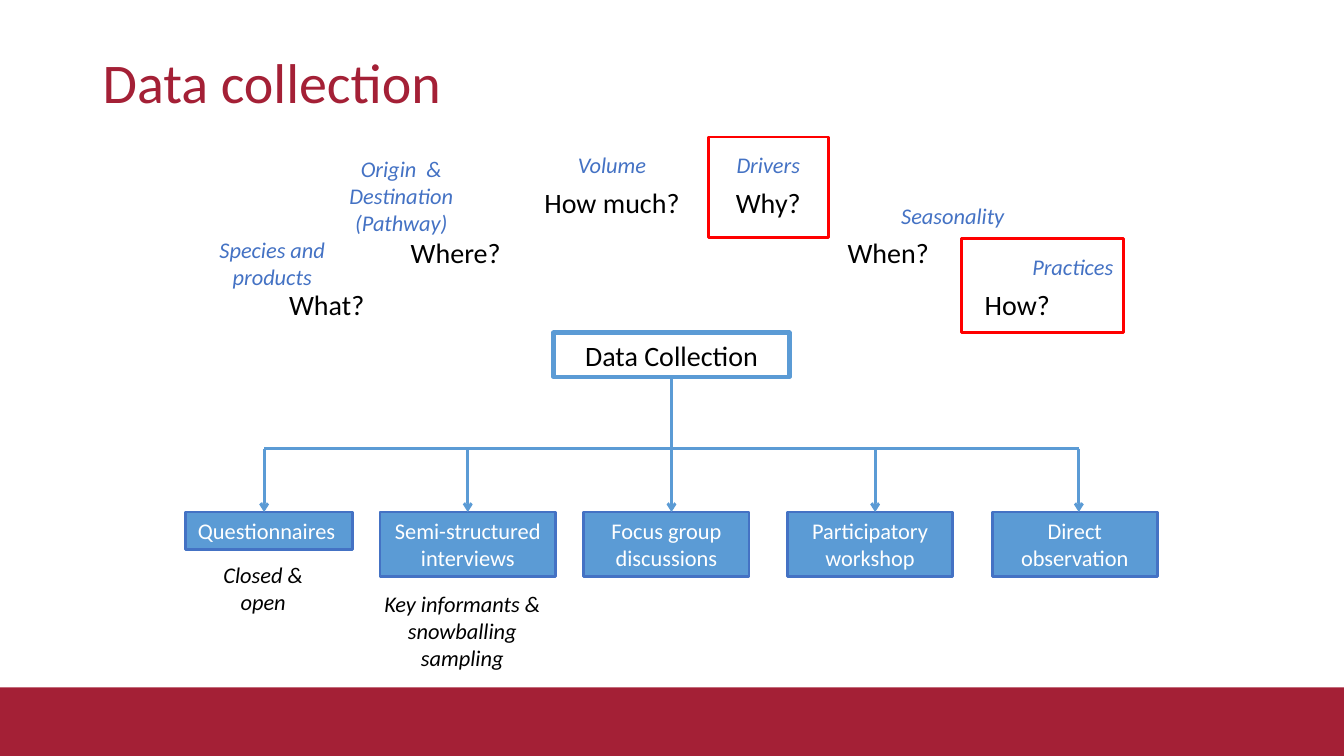
"""Builds the data collection slide: questions, methods and the tree between them."""
from lxml import etree
from pptx import Presentation, util as u
from pptx.dml.color import RGBColor
from pptx.enum import shapes, text
from pptx.oxml.ns import qn

PX = 9144
BLUE, INK, RED, WINE = "5B9BD5", "4472C4", "FF0000", "A42036"

deck = Presentation()
deck.slide_width, deck.slide_height = 1333 * PX, 750 * PX
slide = deck.slides.add_slide(deck.slide_layouts[6])


def hue(code):
    return RGBColor.from_string(code)


def put(words, x, y, w, h, size=16, color="000000", italic=False, box=False,
        fill=None, line=None, width=2, align="CENTER", anchor="TOP", lead=None):
    area = [n * PX for n in (x, y, w, h)]
    if box:
        item = slide.shapes.add_shape(shapes.MSO_SHAPE.RECTANGLE, *area)
        item.shadow.inherit = False
        if fill:
            item.fill.solid()
            item.fill.fore_color.rgb = hue(fill)
        else:
            item.fill.background()
        if line:
            item.line.color.rgb = hue(line)
            item.line.width = u.Pt(width)
        else:
            item.line.fill.background()
    else:
        item = slide.shapes.add_textbox(*area)
    if words:
        frame = item.text_frame
        frame.word_wrap = True
        frame.vertical_anchor = text.MSO_ANCHOR[anchor]
        frame.text = words
        for para in frame.paragraphs:
            para.alignment = text.PP_ALIGN[align]
            para.line_spacing = lead
            font = para.runs[0].font
            font.name, font.size, font.italic = "Calibri", u.Pt(size), italic
            font.color.rgb = hue(color)
    return item


def link(x1, y1, x2, y2, arrow=False):
    wire = slide.shapes.add_connector(
        shapes.MSO_CONNECTOR.STRAIGHT, *[n * PX for n in (x1, y1, x2, y2)])
    wire.line.color.rgb = hue(BLUE)
    wire.line.width = u.Pt(2)
    if arrow:
        etree.SubElement(wire.line._get_or_add_ln(), qn("a:tailEnd"), type="arrow")
    etree.SubElement(wire._element.spPr, qn("a:effectLst"))
    return wire


put("", 0, 682, 1333, 68, box=True, fill=WINE)
put("Data collection", 92, 40, 1150, 89, size=40, color=WINE,
    align="LEFT", anchor="MIDDLE", lead=0.9)

root = put("Data Collection", 549, 330, 234, 44, size=20, box=True,
           line=BLUE, width=3, anchor="MIDDLE")

for words, x, y, w in [
    ("What?", 260, 280, 128),
    ("Where?", 388, 229, 128),
    ("How much?", 516, 179, 182),
    ("Why?", 698, 179, 128),
    ("When?", 817, 229, 128),
    ("How?", 945, 280, 128),
]:
    put(words, x, y, w, 44, size=20)

for words, x, y, h in [
    ("Species and products", 206, 229, 64),
    ("Origin  & Destination\n(Pathway)", 334, 149, 91),
    ("Volume", 543, 145, 37),
    ("Drivers", 698, 145, 37),
    ("Seasonality", 881, 196, 37),
    ("Practices", 1000, 246, 37),
]:
    put(words, x, y, 128, h, color=INK, italic=True)

for area in [(703, 136, 119, 100), (954, 237, 160, 93)]:
    put("", *area, box=True, line=RED)

leaves = []
for words, x, w, h in [
    ("Questionnaires ", 184, 166, 37),
    ("Semi-structured interviews", 377, 174, 64),
    ("Focus group discussions", 579, 164, 64),
    ("Participatory workshop", 781, 164, 64),
    ("Direct observation", 984, 164, 64),
]:
    leaves.append(put(words, x, 508, w, h, color="FFFFFF", box=True,
                      fill=BLUE, line=INK, anchor="MIDDLE"))

put("Closed & open", 197, 552, 128, 64, italic=True)
put("Key informants & snowballing sampling", 358, 581, 201, 91, italic=True)

mid, rail = 666, 445
trunk = link(mid, 374, mid, rail)
trunk.begin_connect(root, 2)
drops = [mid + 202 * step for step in range(-2, 3)]
for end in (drops[0], drops[-1]):
    link(mid, rail, end, rail)
wires = [link(x, rail, x, 508, arrow=True) for x in drops]
wires[1].end_connect(leaves[1], 0)

deck.save("out.pptx")
